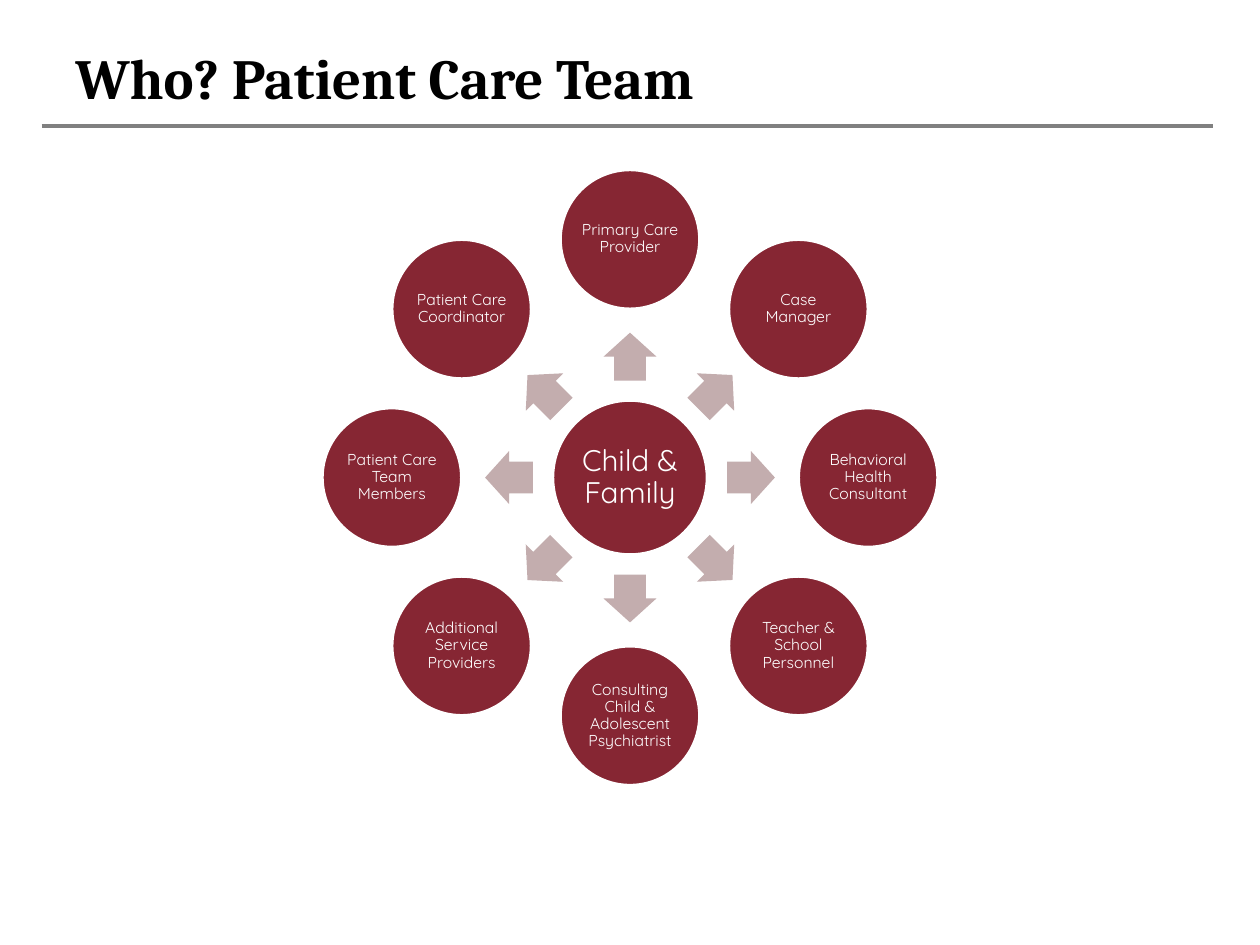
from dataclasses import dataclass
from math import cos, radians, sin

from lxml import etree
from pptx import Presentation
from pptx.dml.color import RGBColor
from pptx.enum.shapes import MSO_CONNECTOR, MSO_SHAPE
from pptx.enum.text import MSO_ANCHOR, PP_ALIGN
from pptx.oxml.ns import qn
from pptx.util import Inches, Pt

OVAL, ARROW = MSO_SHAPE.OVAL, MSO_SHAPE.RIGHT_ARROW
STRAIGHT = MSO_CONNECTOR.STRAIGHT
MIDDLE = MSO_ANCHOR.MIDDLE
LEFT, CENTER = PP_ALIGN.LEFT, PP_ALIGN.CENTER


@dataclass(frozen=True)
class Theme:
    ink: str = "000000"
    paper: str = "FFFFFF"
    rule: str = "808080"
    wine: str = "862633"
    blush: str = "C3ADAE"
    serif: str = "Cambria"
    sans: str = "Quicksand"
    title: float = 32.4
    hub: float = 17
    role: float = 9


def color(code):
    return RGBColor.from_string(code)


class Deck:
    def __init__(self, theme):
        self.theme = theme
        self.file = Presentation()
        self.file.slide_width, self.file.slide_height = Inches(10), Inches(7.5)
        self.slide = self.file.slides.add_slide(self.file.slide_layouts[6])

    def label(self, shape, text, font, inset=None, align=LEFT, space=1.0):
        frame = shape.text_frame
        frame.word_wrap = True
        frame.vertical_anchor = MIDDLE
        if inset is not None:
            for side in ("left", "right", "top", "bottom"):
                setattr(frame, f"margin_{side}", Inches(inset))
        para = frame.paragraphs[0]
        para.alignment, para.line_spacing = align, space
        run = para.add_run()
        run.text = text
        for key, value in font.items():
            if key == "color":
                run.font.color.rgb = color(value)
            else:
                setattr(run.font, key, value)

    def title(self, text):
        box = self.slide.shapes.add_textbox(
            Inches(0.5), Inches(0.3), Inches(9), Inches(0.62))
        self.label(box, text, {"name": self.theme.serif, "size": Pt(self.theme.title),
                               "bold": True, "color": self.theme.ink})

    def rule(self, left, right, top):
        line = self.slide.shapes.add_connector(
            STRAIGHT, Inches(left), Inches(top), Inches(right), Inches(top))
        line.line.color.rgb = color(self.theme.rule)
        line.line.width = Pt(2.25)
        etree.SubElement(line._element.spPr, qn("a:effectLst"))

    def shape(self, kind, x, y, wide, high, fill):
        """Add a filled shape centred on x, y."""
        item = self.slide.shapes.add_shape(
            kind, Inches(x - wide / 2), Inches(y - high / 2), Inches(wide), Inches(high))
        item.shadow.inherit = False
        item.fill.solid()
        item.fill.fore_color.rgb = color(fill)
        return item

    def circle(self, x, y, size, text, points, inset):
        disc = self.shape(OVAL, x, y, size, size, self.theme.wine)
        disc.line.color.rgb = color(self.theme.paper)
        disc.line.width = Pt(2)
        font = {"name": self.theme.sans, "size": Pt(points), "color": self.theme.paper}
        self.label(disc, text, font, inset, CENTER, 0.9)

    def arrow(self, x, y, angle):
        item = self.shape(ARROW, x, y, 0.38, 0.42, self.theme.blush)
        item.line.fill.background()
        item.adjustments[0], item.adjustments[1] = 0.6, 0.5
        item.rotation = angle


ROLES = [
    "Primary Care Provider",
    "Case Manager",
    "Behavioral Health Consultant",
    "Teacher & School Personnel",
    "Consulting Child & Adolescent Psychiatrist",
    "Additional Service Providers",
    "Patient Care Team Members",
    "Patient Care Coordinator",
]
MID_X, MID_Y = 5, 3.79
RING, REACH = 1.89, 0.96


def around(radius, angle):
    turn = radians(angle)
    return MID_X + radius * cos(turn), MID_Y + radius * sin(turn)


def main():
    theme = Theme()
    deck = Deck(theme)

    # Heading
    deck.rule(0.33, 9.63, 1)
    deck.title("Who? Patient Care Team")

    # Hub
    deck.circle(MID_X, MID_Y, 1.23, "Child & Family", theme.hub, 0.02)

    # Team members, clockwise from the top
    for i, role in enumerate(ROLES):
        angle = (270 + i * 360 / len(ROLES)) % 360
        deck.arrow(*around(REACH, angle), angle)
        deck.circle(*around(RING, angle), 1.11, role, theme.role, 0.01)

    deck.file.save("out.pptx")


if __name__ == "__main__":
    main()
